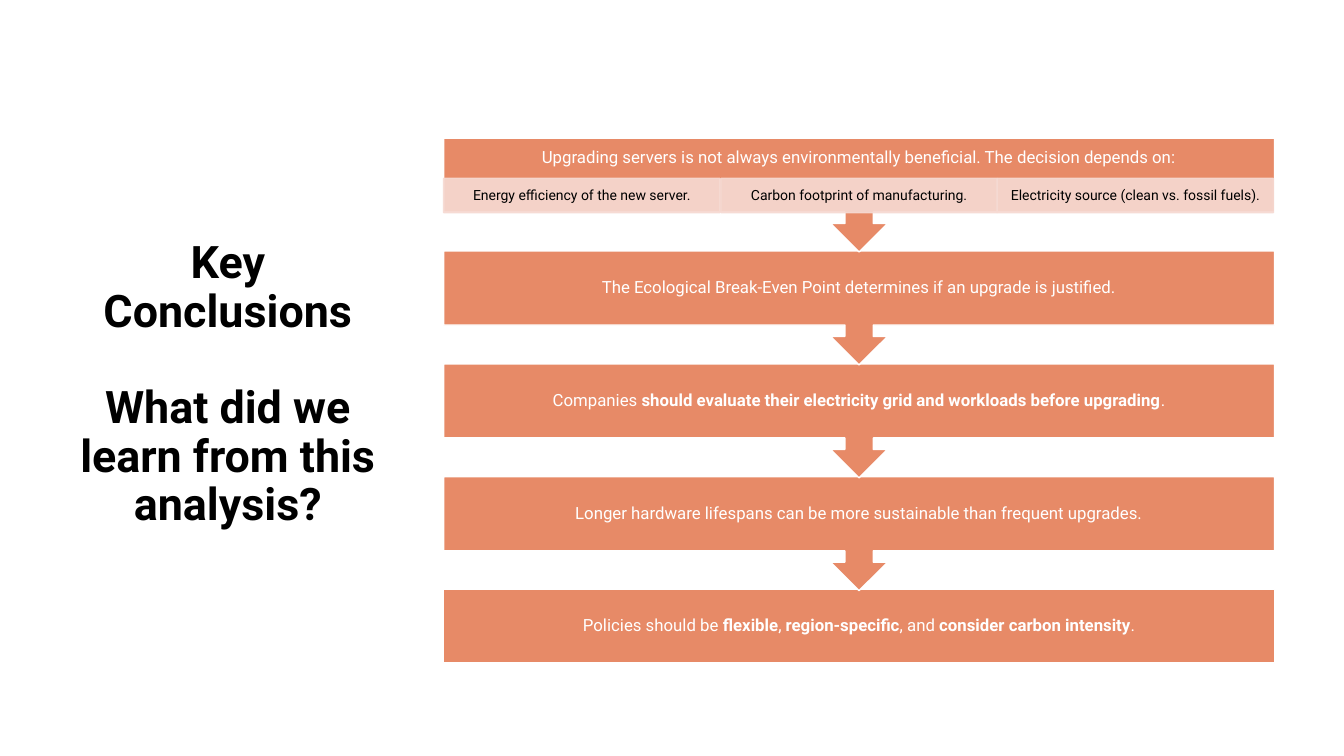
import lxml.etree
import pptx
import pptx.dml.color
import pptx.enum.shapes
import pptx.enum.text
import pptx.oxml.ns
import pptx.util

PX = 9144
ORANGE = pptx.dml.color.RGBColor(0xE7, 0x8A, 0x67)
PALE = pptx.dml.color.RGBColor(0xF6, 0xDA, 0xD3)
WHITE = pptx.dml.color.RGBColor(255, 255, 255)
BLACK = pptx.dml.color.RGBColor(0, 0, 0)
SHAPES = pptx.enum.shapes.MSO_SHAPE
ANCHOR = pptx.enum.text.MSO_ANCHOR

FLOW_LEFT, FLOW_TOP, FLOW_WIDTH = 440, 137, 824
STEP, PANEL_HEIGHT, CALLOUT_HEIGHT, HEADER_HEIGHT = 112, 73, 113, 40
FACTOR_WIDTH, FACTOR_HEIGHT = 274, 34

TITLE = [
    [("Key Conclusions", True)],
    [("What did we learn from this analysis?", True)],
]
CONCLUSIONS = [
    [("Upgrading servers is not always environmentally beneficial. The decision depends on:", False)],
    [("The Ecological Break-Even Point determines if an upgrade is justified.", False)],
    [
        ("Companies ", False),
        ("should evaluate their electricity grid and workloads before upgrading", True),
        (".", False),
    ],
    [("Longer hardware lifespans can be more sustainable than frequent upgrades.", False)],
    [
        ("Policies should be ", False),
        ("flexible", True),
        (", ", False),
        ("region-specific", True),
        (", and ", False),
        ("consider carbon intensity", True),
        (".", False),
    ],
]
FACTORS = [
    "Energy efficiency of the new server.",
    "Carbon footprint of manufacturing.",
    "Electricity source (clean vs. fossil fuels).",
]


def px(*lengths):
    return [pptx.util.Emu(length * PX) for length in lengths]


def write_text(shape, paragraphs, size=12, color=WHITE, anchor=ANCHOR.MIDDLE,
               margins=(9, 9, 9, 9), gap=0):
    frame = shape.text_frame
    frame.word_wrap = True
    frame.vertical_anchor = anchor
    (frame.margin_left, frame.margin_top,
     frame.margin_right, frame.margin_bottom) = px(*margins)
    for index, runs in enumerate(paragraphs):
        paragraph = frame.add_paragraph() if index else frame.paragraphs[0]
        paragraph.alignment = pptx.enum.text.PP_ALIGN.CENTER
        paragraph.line_spacing = 0.9
        paragraph.space_before = pptx.util.Pt(gap if index else 0)
        for text, bold in runs:
            run = paragraph.add_run()
            run.text = text
            run.font.name = "Roboto"
            run.font.size = pptx.util.Pt(size)
            run.font.bold = bold
            run.font.color.rgb = color


def add_block(slide, kind, box, fill, line, opacity=100):
    shape = slide.shapes.add_shape(kind, *px(*box))
    shape.shadow.inherit = False
    shape.fill.solid()
    shape.fill.fore_color.rgb = fill
    shape.line.color.rgb = line
    shape.line.width = pptx.util.Pt(1)
    if opacity < 100:
        for color in shape._element.spPr.iter(pptx.oxml.ns.qn("a:srgbClr")):
            lxml.etree.SubElement(color, pptx.oxml.ns.qn("a:alpha"), val=str(opacity * 1000))
    return shape


def add_title(slide):
    title = slide.shapes.add_textbox(*px(67, 137, 318, 522))
    write_text(title, TITLE, size=32, color=BLACK, anchor=ANCHOR.TOP,
               margins=(10, 101, 10, 5), gap=34.5)


def add_conclusion(slide, index):
    top = FLOW_TOP + index * STEP
    panel = (FLOW_LEFT, top, FLOW_WIDTH, PANEL_HEIGHT if index else HEADER_HEIGHT)
    if index == len(CONCLUSIONS) - 1:
        label = add_block(slide, SHAPES.RECTANGLE, panel, ORANGE, WHITE)
    else:
        callout = add_block(slide, SHAPES.UP_ARROW_CALLOUT,
                            (FLOW_LEFT, top, FLOW_WIDTH, CALLOUT_HEIGHT), ORANGE, WHITE)
        callout.rotation = 180
        label = slide.shapes.add_textbox(*px(*panel))
    write_text(label, [CONCLUSIONS[index]])


def add_factor(slide, index):
    left = FLOW_LEFT + round(index * FLOW_WIDTH / len(FACTORS))
    box = (left, FLOW_TOP + HEADER_HEIGHT, FACTOR_WIDTH, FACTOR_HEIGHT)
    factor = add_block(slide, SHAPES.RECTANGLE, box, PALE, PALE, opacity=90)
    write_text(factor, [[(FACTORS[index], False)]], size=10, color=BLACK,
               margins=(8, 1, 8, 1))


def main():
    presentation = pptx.Presentation()
    presentation.slide_width, presentation.slide_height = px(1333, 750)
    slide = presentation.slides.add_slide(presentation.slide_layouts[6])
    add_title(slide)
    for index in reversed(range(len(CONCLUSIONS))):
        add_conclusion(slide, index)
    for index in range(len(FACTORS)):
        add_factor(slide, index)
    presentation.save("out.pptx")


if __name__ == "__main__":
    main()
